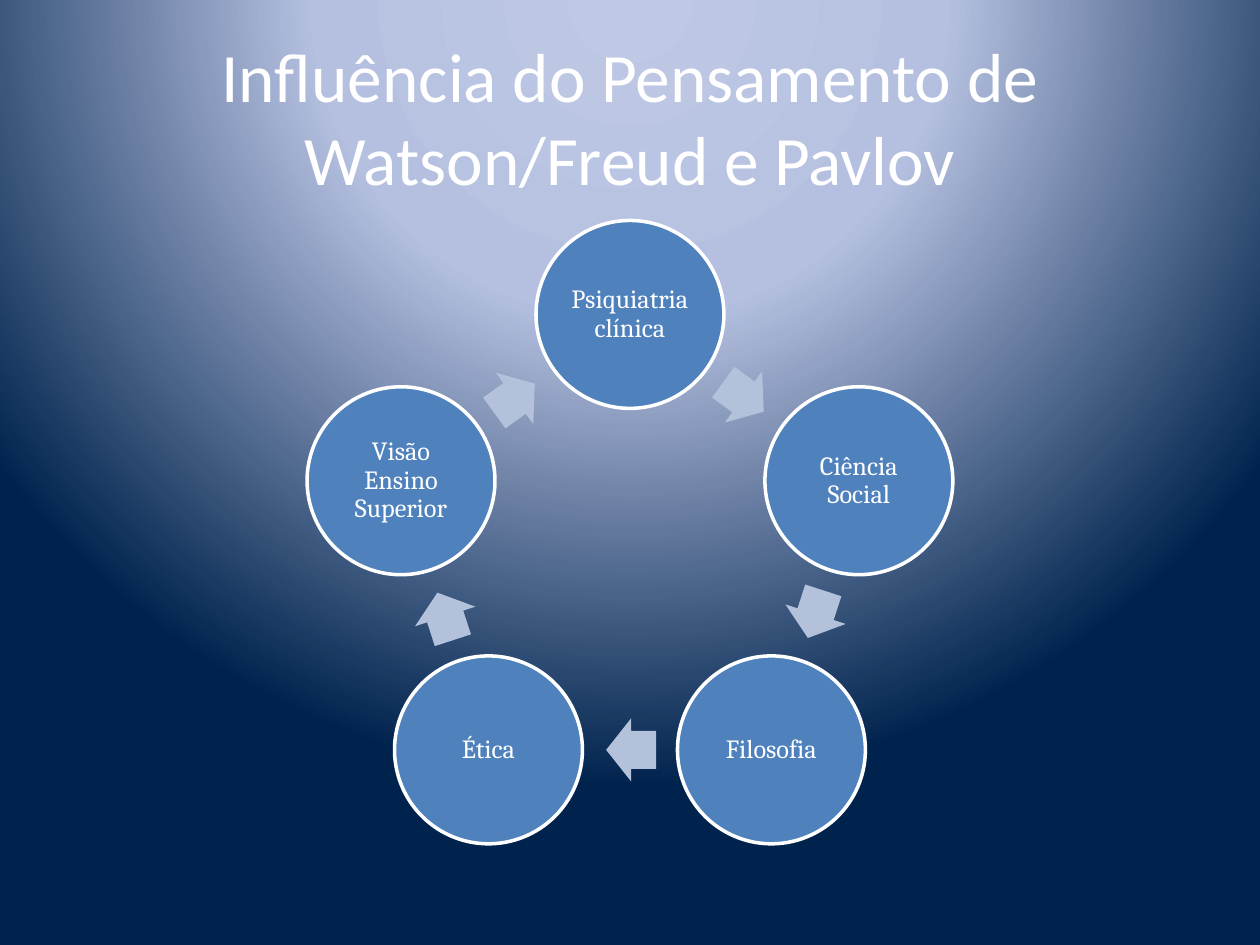
from dataclasses import dataclass
from math import cos, radians, sin

from pptx import Presentation
from pptx import oxml
from pptx.dml.color import RGBColor
from pptx.enum import shapes, text
from pptx.oxml import ns
from pptx.util import Pt


@dataclass(frozen=True)
class Theme:
    white: str = "FFFFFF"
    blue: str = "4F81BD"
    pale: str = "B3C1DB"
    glow: tuple = ((0, "BFC9E5"), (40, "B5C0E0"), (100, "00234D"))
    head: str = "Calibri"
    body: str = "Cambria"
    big: float = 39.6
    small: float = 15


THEME = Theme()
TITLE = "Influência do Pensamento de Watson/Freud e Pavlov"
TOPICS = ["Psiquiatria clínica", "Ciência Social", "Filosofia", "Ética",
          "Visão Ensino Superior"]


def paint(fill, color):
    fill.solid()
    fill.fore_color.rgb = RGBColor.from_string(color)


def write(frame, words, font, size, inset):
    frame.word_wrap = True
    frame.auto_size = text.MSO_AUTO_SIZE.NONE
    frame.vertical_anchor = text.MSO_ANCHOR.MIDDLE
    frame.margin_left = frame.margin_right = Pt(inset[0])
    frame.margin_top = frame.margin_bottom = Pt(inset[1])
    para = frame.paragraphs[0]
    para.alignment = text.PP_ALIGN.CENTER
    run = para.add_run()
    run.text = words
    run.font.name = font
    run.font.size = Pt(size)
    run.font.color.rgb = RGBColor.from_string(THEME.white)
    return para


def add_glow(slide):
    slide.background.fill.solid()
    props = slide.element.find(".//" + ns.qn("p:bgPr"))
    stops = "".join(
        f'<a:gs pos="{pos * 1000}"><a:srgbClr val="{color}"/></a:gs>'
        for pos, color in THEME.glow)
    grad = oxml.parse_xml(
        f'<a:gradFill {ns.nsdecls("a")} rotWithShape="1"><a:gsLst>{stops}</a:gsLst>'
        '<a:path path="circle"><a:fillToRect l="50000" t="-80000" r="50000" '
        'b="180000"/></a:path></a:gradFill>')
    props.replace(props[0], grad)


def add_title(slide, left, top, width, height):
    title = slide.shapes.title
    title.left, title.top = Pt(left), Pt(top)
    title.width, title.height = Pt(width), Pt(height)
    write(title.text_frame, TITLE, THEME.head, THEME.big, (7.2, 3.6))


def add_part(group, kind, x, y, width, height, color):
    part = group.shapes.add_shape(
        kind, Pt(x - width / 2), Pt(y - height / 2), Pt(width), Pt(height))
    part.shadow.inherit = False
    paint(part.fill, color)
    return part


def add_cycle(slide, left, top, width, topics):
    group = slide.shapes.add_group_shape()
    step = 360 / len(topics)
    disc = width * 0.291
    ring = (width - disc) / 2 / sin(radians(step))
    mid = left + width / 2, top + disc / 2 + ring

    def spot(angle, reach):
        turn = radians(angle)
        return mid[0] + reach * sin(turn), mid[1] - reach * cos(turn)

    for i, topic in enumerate(topics):
        angle = i * step
        node = add_part(group, shapes.MSO_SHAPE.OVAL, *spot(angle, ring),
                        disc, disc, THEME.blue)
        paint(node.line.fill, THEME.white)
        node.line.width = Pt(2)
        para = write(node.text_frame, topic, THEME.body, THEME.small, (1.5, 1.5))
        para.line_spacing = 0.9

        angle += step / 2
        place = spot(angle - 0.35, ring * cos(radians(step / 2)))
        arrow = add_part(group, shapes.MSO_SHAPE.RIGHT_ARROW, *place,
                         28.6, 36.2, THEME.pale)
        arrow.line.fill.background()
        arrow.adjustments[0] = 0.6
        arrow.adjustments[1] = 0.5
        arrow.rotation = angle


def main():
    deck = Presentation()
    deck.slide_width, deck.slide_height = Pt(720), Pt(540)
    slide = deck.slides.add_slide(deck.slide_layouts[5])
    add_glow(slide)
    add_title(slide, 36, 21.6, 648, 90)
    add_cycle(slide, 175.5, 126, 369, TOPICS)
    deck.save("out.pptx")


if __name__ == "__main__":
    main()
